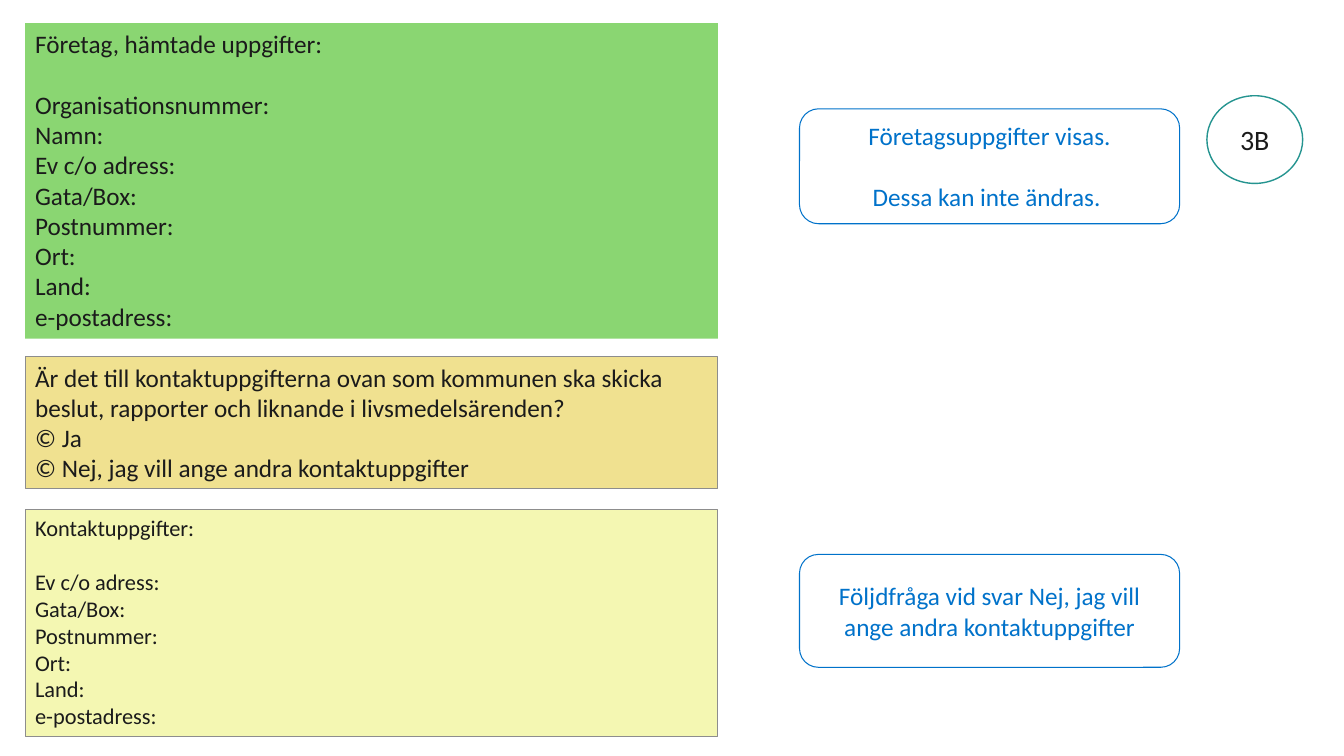
from dataclasses import dataclass

from pptx import Presentation
from pptx.dml.color import RGBColor
from pptx.enum.shapes import MSO_SHAPE
from pptx.enum.text import MSO_ANCHOR, PP_ALIGN
from pptx.util import Emu, Pt

EMU_PER_PX = 9144
LINE_HEIGHT = 1.22


@dataclass(frozen=True)
class Theme:
    font: str = "Calibri"
    text: str = "1B1B1B"
    note: str = "0072CA"
    badge_line: str = "259490"
    panel_line: str = "8D8D8D"
    white: str = "FFFFFF"
    company: str = "8AD672"
    question: str = "F0E190"
    contact: str = "F4F7B2"
    small: int = 16
    body: int = 18
    badge: int = 20


THEME = Theme()

ADDRESS_FIELDS = ["Ev c/o adress:", "Gata/Box:", "Postnummer:", "Ort:", "Land:", "e-postadress:"]


def px(length):
    return Emu(length * EMU_PER_PX)


def add_box(slide, preset, box, fill, line, line_width):
    shape = slide.shapes.add_shape(preset, *map(px, box))
    shape.shadow.inherit = False
    if fill:
        shape.fill.solid()
        shape.fill.fore_color.rgb = RGBColor.from_string(fill)
    else:
        shape.fill.background()
    if line:
        shape.line.color.rgb = RGBColor.from_string(line)
        shape.line.width = Pt(line_width)
    else:
        shape.line.fill.background()
    return shape


def write_text(shape, lines, size, color, alignment, anchor, gap_after_first=False):
    text_frame = shape.text_frame
    text_frame.word_wrap = True
    text_frame.vertical_anchor = anchor
    text_frame.text = "\n".join(lines)
    for paragraph in text_frame.paragraphs:
        paragraph.alignment = alignment
        for run in paragraph.runs:
            run.font.name = THEME.font
            run.font.size = Pt(size)
            run.font.color.rgb = RGBColor.from_string(color)
    if gap_after_first:
        text_frame.paragraphs[1].space_before = Pt(round(size * LINE_HEIGHT, 1))


def add_panel(slide, box, fill, line, lines, size, gap_after_first=False):
    panel = add_box(slide, MSO_SHAPE.RECTANGLE, box, fill, line, 0.5)
    write_text(panel, lines, size, THEME.text, PP_ALIGN.LEFT, MSO_ANCHOR.TOP, gap_after_first)


def add_note(slide, box, lines, gap_after_first=False):
    note = add_box(slide, MSO_SHAPE.ROUNDED_RECTANGLE, box, None, THEME.note, 0.75)
    write_text(note, lines, THEME.body, THEME.note, PP_ALIGN.CENTER, MSO_ANCHOR.MIDDLE, gap_after_first)


def add_badge(slide, box, label):
    badge = add_box(slide, MSO_SHAPE.OVAL, box, THEME.white, THEME.badge_line, 1)
    write_text(badge, [label], THEME.badge, THEME.text, PP_ALIGN.CENTER, MSO_ANCHOR.MIDDLE)


def add_form(slide, box):
    left, top, width = box
    company = ["Företag, hämtade uppgifter:", "Organisationsnummer:", "Namn:", *ADDRESS_FIELDS]
    question = [
        "Är det till kontaktuppgifterna ovan som kommunen ska skicka beslut, rapporter och liknande i livsmedelsärenden?",
        "© Ja",
        "© Nej, jag vill ange andra kontaktuppgifter",
    ]
    contact = ["Kontaktuppgifter:", *ADDRESS_FIELDS]
    add_panel(slide, (left, top, width, 313), THEME.company, None, company, THEME.body, True)
    add_panel(slide, (left, top + 331, width, 131), THEME.question, THEME.panel_line, question, THEME.body)
    add_panel(slide, (left, top + 482, width, 226), THEME.contact, THEME.panel_line, contact, THEME.small, True)


def add_guidance(slide, box):
    left, top, width = box
    add_note(
        slide, (left, top, width, 114), ["Företagsuppgifter visas.", "Dessa kan inte ändras. "], True
    )
    add_note(
        slide,
        (left, top + 442, width, 112),
        ["Följdfråga vid svar Nej, jag vill ange andra kontaktuppgifter"],
    )
    add_badge(slide, (left + width + 27, top - 13, 95, 87), "3B")


def main():
    presentation = Presentation()
    presentation.slide_width = px(1333)
    presentation.slide_height = px(750)
    slide = presentation.slides.add_slide(presentation.slide_layouts[6])
    add_form(slide, (25, 23, 687))
    add_guidance(slide, (793, 108, 377))
    presentation.save("out.pptx")


if __name__ == "__main__":
    main()
